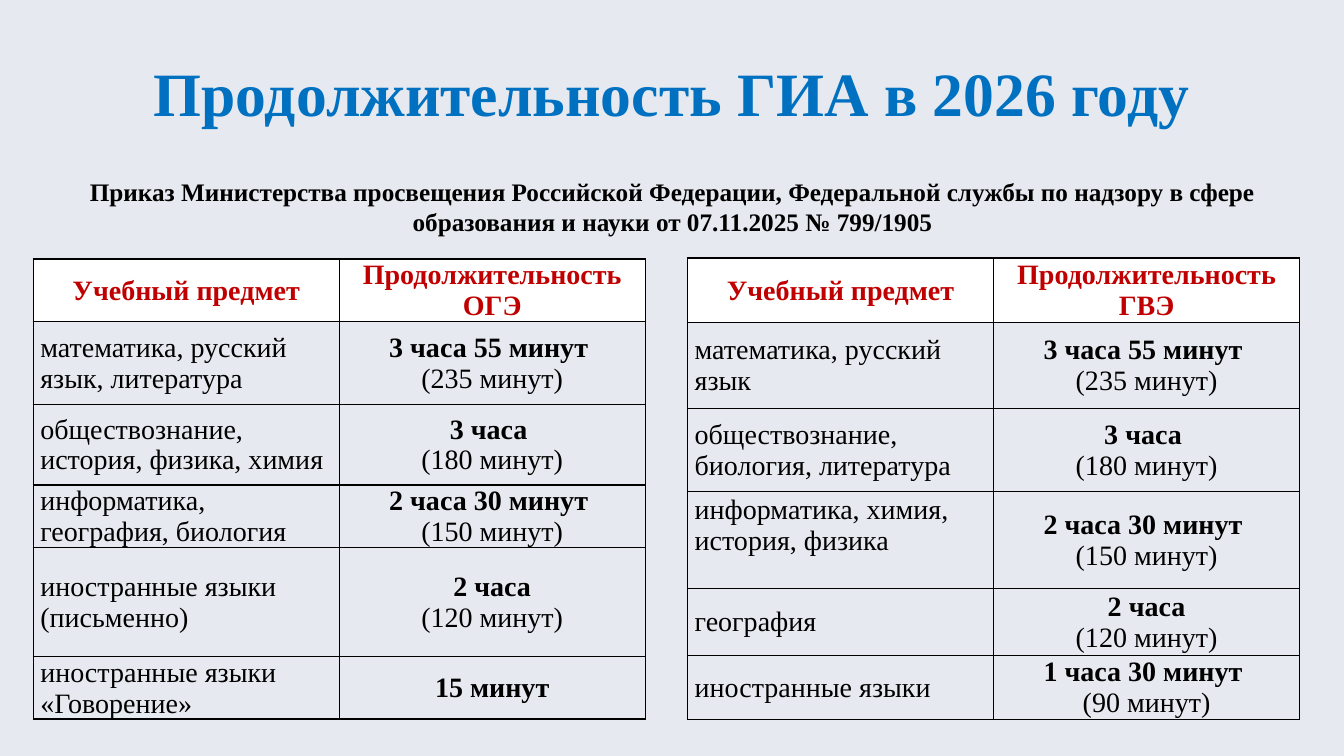
from lxml.etree import SubElement
from pptx import Presentation
from pptx.dml.color import RGBColor
from pptx.enum.text import MSO_ANCHOR, PP_ALIGN
from pptx.oxml.ns import qn
from pptx.util import Inches, Pt

COLORS = {"back": "E6E9EF", "title": "0070C0", "head": "C00000",
          "text": "000000", "white": "FFFFFF", "line": "000000"}
FONT = "Times New Roman"

OGE = [
    ("математика, русский язык, литература", "3 часа 55 минут ", "(235 минут)"),
    ("обществознание, история, физика, химия", "3 часа ", "(180 минут)"),
    ("информатика, география, биология", "2 часа 30 минут ", "(150 минут)"),
    ("иностранные языки (письменно)", "2 часа", "(120 минут)"),
    ("иностранные языки «Говорение»", "15 минут"),
]
GVE = [
    ("математика, русский язык", "3 часа 55 минут ", "(235 минут)"),
    ("обществознание, биология, литература", "3 часа ", "(180 минут)"),
    ("информатика, химия, история, физика", "2 часа 30 минут ", "(150 минут)"),
    ("география", "2 часа", "(120 минут)"),
    ("иностранные языки", "1 часа 30 минут ", "(90 минут)"),
]


def color(name):
    return RGBColor.from_string(COLORS[name])


def write(par, text, size=20, ink="text", bold=False, align=PP_ALIGN.CENTER, pitch=None):
    par.alignment = align
    if pitch:
        par.line_spacing = Pt(pitch)
    run = par.add_run()
    run.text = text
    font = run.font
    font.name, font.size, font.bold = FONT, Pt(size), bold
    font.color.rgb = color(ink)


def border(cell):
    props = cell._tc.get_or_add_tcPr()
    for i, side in enumerate(("a:lnL", "a:lnR", "a:lnT", "a:lnB")):
        line = SubElement(props, qn(side), w=str(Pt(1)))
        fill = SubElement(line, qn("a:solidFill"))
        SubElement(fill, qn("a:srgbClr"), val=COLORS["line"])
        props.insert(i, line)


class Deck:
    def __init__(self):
        self.show = Presentation()
        self.show.slide_width, self.show.slide_height = Inches(13.33), Inches(7.5)
        self.slide = self.show.slides.add_slide(self.show.slide_layouts[5])
        fill = self.slide.background.fill
        fill.solid()
        fill.fore_color.rgb = color("back")

    def title(self, text, left, top, width, height):
        shape = self.slide.shapes.title
        shape.left, shape.top = Inches(left), Inches(top)
        shape.width, shape.height = Inches(width), Inches(height)
        shape.text_frame.vertical_anchor = MSO_ANCHOR.MIDDLE
        write(shape.text_frame.paragraphs[0], text, size=44, ink="title", bold=True)

    def label(self, text, left, top, width, height):
        box = self.slide.shapes.add_textbox(
            Inches(left), Inches(top), Inches(width), Inches(height))
        box.text_frame.word_wrap = True
        write(box.text_frame.paragraphs[0], text, size=18, bold=True)

    def cell(self, cell, lines, fill=None, **style):
        """Fill a cell; lines are pairs of text and bold."""
        cell.margin_left = cell.margin_right = Inches(0.07)
        cell.margin_top, cell.margin_bottom = Inches(0.01), 0
        cell.vertical_anchor = MSO_ANCHOR.MIDDLE
        if fill:
            cell.fill.solid()
            cell.fill.fore_color.rgb = color(fill)
        else:
            cell.fill.background()
        border(cell)
        frame = cell.text_frame
        for i, (text, bold) in enumerate(lines):
            par = frame.add_paragraph() if i else frame.paragraphs[0]
            write(par, text, bold=bold, pitch=22, **style)

    def table(self, exam, data, left, top, heights):
        frame = self.slide.shapes.add_table(
            len(heights), 2, Inches(left), Inches(top), Inches(6.07), Inches(sum(heights)))
        table = frame.table
        table.first_row = table.horz_banding = False
        for col in table.columns:
            col.width = Inches(6.07 / 2)
        for row, height in zip(table.rows, heights):
            row.height = Inches(height)
        for i, text in enumerate(("Учебный предмет", f"Продолжительность {exam}")):
            self.cell(table.cell(0, i), [(text, True)], fill="white", ink="head")
        for i, (subject, *times) in enumerate(data, 1):
            self.cell(table.cell(i, 0), [(subject, False)], align=PP_ALIGN.LEFT)
            self.cell(table.cell(i, 1), [(t, n == 0) for n, t in enumerate(times)])
        return table


def main():
    deck = Deck()
    deck.title("Продолжительность ГИА в 2026 году", 0, 0.44, 13.33, 0.94)
    gve = deck.table("ГВЭ", GVE, 6.82, 2.56, (0.64, 0.85, 0.83, 0.96, 0.66, 0.64))
    high = gve.cell(3, 0)
    high.vertical_anchor, high.margin_top = MSO_ANCHOR.TOP, Inches(0.03)
    deck.table("ОГЭ", OGE, 0.33, 2.57, (0.62, 0.82, 0.8, 0.62, 1.08, 0.62))
    deck.label("Приказ Министерства просвещения Российской Федерации, Федеральной службы "
               "по надзору в сфере образования и науки от 07.11.2025 № 799/1905",
               0.39, 1.7, 12.56, 0.71)
    deck.show.save("out.pptx")


if __name__ == "__main__":
    main()
